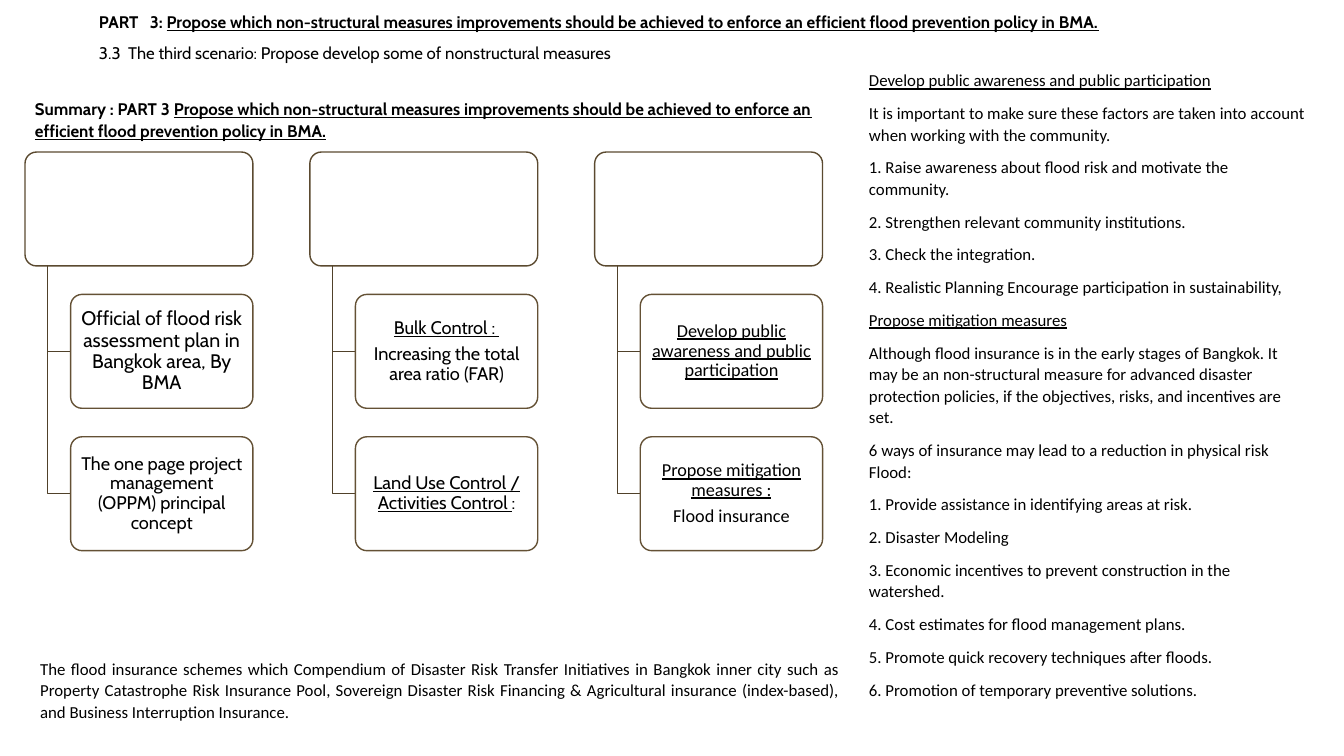
from dataclasses import dataclass

from pptx import Presentation
from pptx.dml.color import RGBColor
from pptx.enum.shapes import MSO_SHAPE
from pptx.enum.text import MSO_ANCHOR, MSO_AUTO_SIZE, PP_ALIGN
from pptx.util import Inches, Pt


@dataclass(frozen=True)
class Theme:
    cell: float = 0.565
    ink: str = "000000"
    paper: str = "FFFFFF"
    parent_line: str = "5B4A30"
    child_line: str = "645135"
    link_line: str = "50412A"
    display: str = "Cabin"
    body: str = "Calibri"
    body_size: int = 12
    box_size: int = 13
    large_size: int = 14


PROSE = {"line_spacing": 1.07, "space_before": Pt(0), "space_after": Pt(8)}
LEFT = {**PROSE, "alignment": PP_ALIGN.LEFT}
JUSTIFIED = {**PROSE, "alignment": PP_ALIGN.JUSTIFY}
BOXED = {"alignment": PP_ALIGN.CENTER, "line_spacing": 0.9, "space_after": Pt(4.5)}
PROSE_FRAME = {"word_wrap": True, "auto_size": MSO_AUTO_SIZE.NONE,
               "vertical_anchor": MSO_ANCHOR.TOP}
BOX_FRAME = {"word_wrap": True, "vertical_anchor": MSO_ANCHOR.MIDDLE,
             "margin_left": Inches(0.06), "margin_right": Inches(0.06),
             "margin_top": Inches(0.05), "margin_bottom": Inches(0.05)}


def apply(target, formats):
    for name, value in formats.items():
        setattr(target, name, value)


class SlideBuilder:
    def __init__(self, page, theme):
        self.page = page
        self.theme = theme

    def cells(self, *counts):
        return [Inches(count * self.theme.cell) for count in counts]

    def fill_text(self, frame, paragraphs, font, size, frame_format, para_format):
        apply(frame, frame_format)
        for index, spans in enumerate(paragraphs):
            para = frame.add_paragraph() if index else frame.paragraphs[0]
            apply(para, para_format)
            for text, marks in spans:
                span = para.add_run()
                span.text = text
                apply(span.font, {"name": font, "size": Pt(size),
                                  "bold": "b" in marks, "underline": "u" in marks})
                span.font.color.rgb = RGBColor.from_string(self.theme.ink)

    def title(self, area, paragraphs):
        box = self.page.shapes.title
        apply(box, dict(zip(("left", "top", "width", "height"), self.cells(*area))))
        self.fill_text(box.text_frame, paragraphs, self.theme.display,
                       self.theme.body_size, PROSE_FRAME, JUSTIFIED)
        box.text_frame.paragraphs[-1].line_spacing = 1.0

    def prose(self, area, paragraphs, font, para_format):
        box = self.page.shapes.add_textbox(*self.cells(*area))
        self.fill_text(box.text_frame, paragraphs, font,
                       self.theme.body_size, PROSE_FRAME, para_format)

    def outline(self, shape, color):
        shape.shadow.inherit = False
        shape.line.color.rgb = RGBColor.from_string(color)
        shape.line.width = Pt(1)

    def rounded_box(self, area, color):
        box = self.page.shapes.add_shape(MSO_SHAPE.ROUNDED_RECTANGLE, *self.cells(*area))
        box.adjustments[0] = 0.1
        box.fill.solid()
        box.fill.fore_color.rgb = RGBColor.from_string(self.theme.paper)
        self.outline(box, color)
        return box

    def elbow(self, left, top, right, bottom):
        start, corner, end = (self.cells(*point) for point in
                              ((left, top), (left, bottom), (right, bottom)))
        builder = self.page.shapes.build_freeform(*start)
        builder.add_line_segments([corner, end], close=False)
        link = builder.convert_to_shape()
        link.fill.background()
        self.outline(link, self.theme.link_line)

    def branch(self, left, top, children):
        self.rounded_box((left, top, 4, 2), self.theme.parent_line)
        for row, (paragraphs, font, size) in enumerate(children):
            child_top = top + 2.5 * (row + 1)
            self.elbow(left + 0.4, top + 2, left + 0.8, child_top + 1)
            box = self.rounded_box((left + 0.8, child_top, 3.2, 2), self.theme.child_line)
            self.fill_text(box.text_frame, paragraphs, font, size, BOX_FRAME, BOXED)


QUESTION = ("Propose which non-structural measures improvements should be achieved "
            "to enforce an efficient flood prevention policy in BMA.")
AWARENESS = "Develop public awareness and public participation"
MITIGATION = "Propose mitigation measures"

SIDE_NOTES = [
    (AWARENESS, "u"),
    ("It is important to make sure these factors are taken into account "
     "when working with the community.", ""),
    ("1. Raise awareness about flood risk and motivate the community.", ""),
    ("2. Strengthen relevant community institutions.", ""),
    ("3. Check the integration.", ""),
    ("4. Realistic Planning Encourage participation in sustainability,", ""),
    (MITIGATION, "u"),
    ("Although flood insurance is in the early stages of Bangkok. It may be an "
     "non-structural measure for advanced disaster protection policies, if the "
     "objectives, risks, and incentives are set.", ""),
    ("6 ways of insurance may lead to a reduction in physical risk Flood:", ""),
    ("1. Provide assistance in identifying areas at risk.", ""),
    ("2. Disaster Modeling", ""),
    ("3. Economic incentives to prevent construction in the watershed.", ""),
    ("4. Cost estimates for flood management plans.", ""),
    ("5. Promote quick recovery techniques after floods.", ""),
    ("6. Promotion of temporary preventive solutions.", ""),
]

INSURANCE_SCHEMES = (
    "The flood insurance schemes which Compendium of Disaster Risk Transfer Initiatives "
    "in Bangkok inner city such as Property Catastrophe Risk Insurance Pool, Sovereign "
    "Disaster Risk Financing & Agricultural insurance (index-based), and Business "
    "Interruption Insurance.")


def main():
    theme = Theme()
    branches = [
        [([[("Official of flood risk assessment plan in Bangkok area, By BMA", "")]],
          theme.display, theme.large_size),
         ([[("The one page project management (OPPM) principal concept", "")]],
          theme.display, theme.box_size)],
        [([[("Bulk Control : ", "u")], [("Increasing the total area ratio (FAR)", "")]],
          theme.display, theme.box_size),
         ([[("Land Use Control / Activities Control ", "u"), (":", "")]],
          theme.display, theme.box_size)],
        [([[(AWARENESS, "u")]], theme.body, theme.box_size),
         ([[(MITIGATION + " :", "u")], [("Flood insurance", "")]],
          theme.body, theme.box_size)],
    ]

    deck = Presentation()
    apply(deck, {"slide_width": Inches(13.33), "slide_height": Inches(7.5)})
    slide = SlideBuilder(deck.slides.add_slide(deck.slide_layouts[5]), theme)

    slide.title((1.56, 0.09, 21.59, 1.12), [
        [("PART   3: ", "b"), (QUESTION, "bu")],
        [("3.3  The third scenario: Propose develop some of nonstructural measures", "")],
    ])
    slide.prose((15.08, 1.12, 8.05, 11.38), [[note] for note in SIDE_NOTES],
                theme.body, LEFT)
    for column, children in enumerate(branches):
        slide.branch(0.44 + 5 * column, 2.67, children)
    slide.prose((0.44, 1.63, 13.98, 1.52),
                [[("Summary : PART 3 ", "b"), (QUESTION, "bu")]], theme.display, JUSTIFIED)
    slide.prose((0.53, 11.45, 14.39, 1.33), [[(INSURANCE_SCHEMES, "")]],
                theme.body, JUSTIFIED)
    deck.save("out.pptx")


if __name__ == "__main__":
    main()
